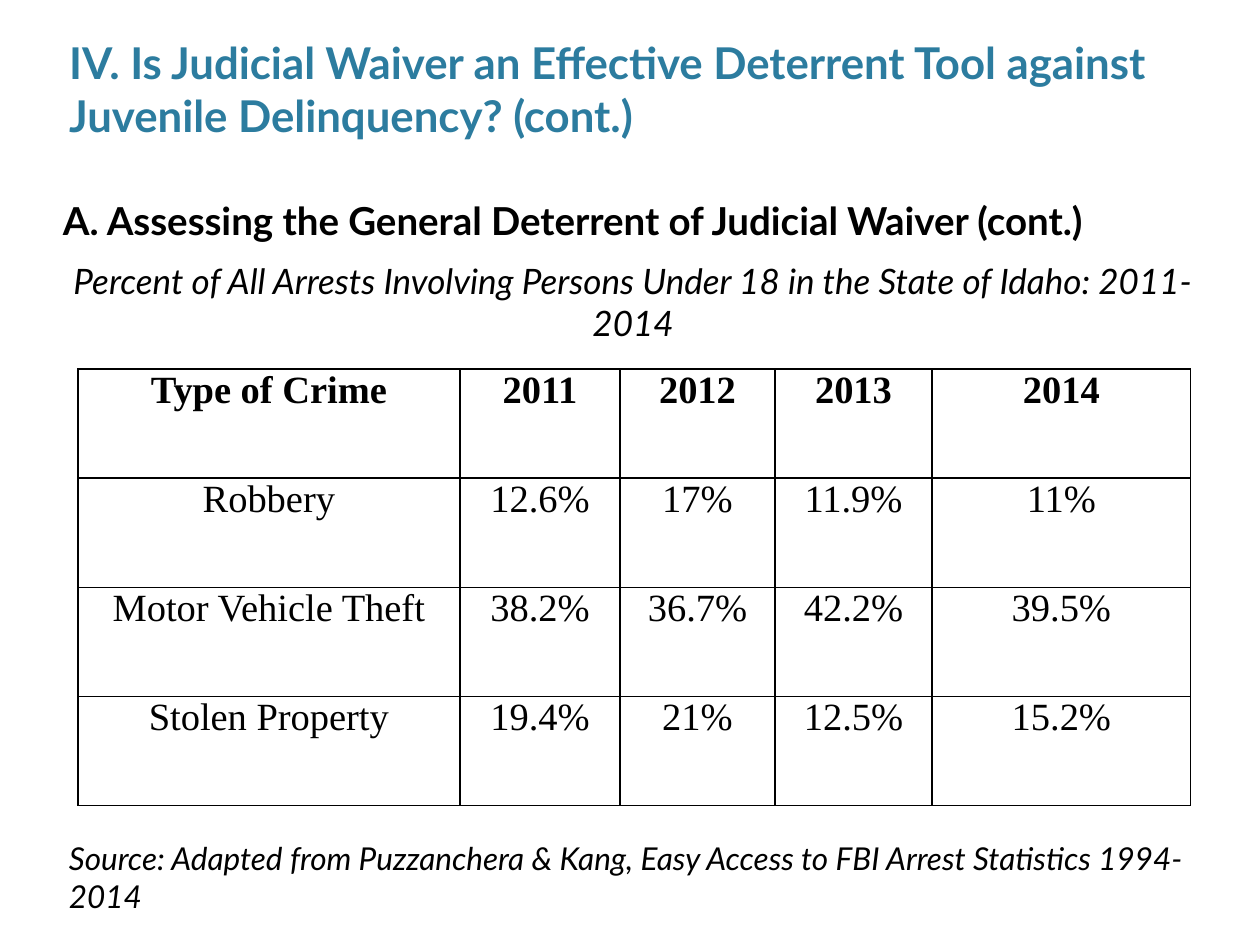
from pptx import Presentation
from pptx.dml.color import RGBColor
from pptx.enum.text import MSO_ANCHOR, MSO_AUTO_SIZE, PP_ALIGN
from pptx.oxml import parse_xml
from pptx.oxml.ns import nsdecls
from pptx.util import Cm, Pt

TEAL = RGBColor(0x2C, 0x7C, 0x9F)
BLACK = RGBColor(0x00, 0x00, 0x00)

ARRESTS = [
    ("Type of Crime", "2011", "2012", "2013", "2014"),
    ("Robbery", "12.6%", "17%", "11.9%", "11%"),
    ("Motor Vehicle Theft", "38.2%", "36.7%", "42.2%", "39.5%"),
    ("Stolen Property", "19.4%", "21%", "12.5%", "15.2%"),
]
COLUMN_WIDTHS = (7.7, 3.23, 3.12, 3.17, 5.21)
ROW_HEIGHT = 2.2


class SlideBuilder:
    """Holds the text style and the slide being filled."""

    text_font = "Lato"
    table_font = "Times New Roman"
    table_size = 22

    def __init__(self, slide):
        self.slide = slide

    def set_text(self, text_frame, text, size, font=text_font, color=BLACK,
                 bold=False, italic=False, align=PP_ALIGN.LEFT):
        text_frame.text = text
        text_frame.word_wrap = True
        paragraph = text_frame.paragraphs[0]
        paragraph.alignment = align
        for run in paragraph.runs:
            run.font.name = font
            run.font.size = Pt(size)
            run.font.color.rgb = color
            run.font.bold = bold
            run.font.italic = italic

    def title(self, text, left, top, width, height, size):
        title = self.slide.shapes.title
        title.left, title.top = Cm(left), Cm(top)
        title.width, title.height = Cm(width), Cm(height)
        self.set_text(title.text_frame, text, size, color=TEAL, bold=True)
        title.text_frame.vertical_anchor = MSO_ANCHOR.BOTTOM
        title.text_frame.auto_size = MSO_AUTO_SIZE.NONE

    def text(self, text, left, top, width, height, size, **style):
        box = self.slide.shapes.add_textbox(Cm(left), Cm(top), Cm(width), Cm(height))
        self.set_text(box.text_frame, text, size, **style)
        box.text_frame.auto_size = MSO_AUTO_SIZE.SHAPE_TO_FIT_TEXT

    def table(self, rows, left, top, column_widths, row_height):
        frame = self.slide.shapes.add_table(
            len(rows), len(column_widths), Cm(left), Cm(top),
            Cm(sum(column_widths)), Cm(row_height * len(rows)))
        table = frame.table
        table.first_row = table.horz_banding = False
        for column, width in zip(table.columns, column_widths):
            column.width = Cm(width)
        for row_index, values in enumerate(rows):
            table.rows[row_index].height = Cm(row_height)
            for column_index, value in enumerate(values):
                cell = table.cell(row_index, column_index)
                self.set_text(cell.text_frame, value, self.table_size,
                              font=self.table_font, bold=row_index == 0,
                              align=PP_ALIGN.CENTER)
                cell.margin_left = cell.margin_right = Cm(0.18)
                cell.margin_top = cell.margin_bottom = 0
                self.border(cell)
                cell.fill.background()

    def border(self, cell):
        properties = cell._tc.get_or_add_tcPr()
        for side in ("lnL", "lnR", "lnT", "lnB"):
            properties.append(parse_xml(
                f'<a:{side} {nsdecls("a")} w="{Pt(1)}"><a:solidFill>'
                f'<a:srgbClr val="{BLACK}"/></a:solidFill></a:{side}>'))


def main():
    presentation = Presentation()
    presentation.slide_width, presentation.slide_height = Cm(25.4), Cm(19.05)
    title_only = presentation.slide_layouts[5]
    builder = SlideBuilder(presentation.slides.add_slide(title_only))

    # Title and section heading
    builder.title("IV. Is Judicial Waiver an Effective Deterrent Tool against "
                  "Juvenile Delinquency? (cont.)", 1.14, 0.43, 23.01, 2.54, 25)
    builder.text("A. Assessing the General Deterrent of Judicial Waiver (cont.)",
                 1.02, 3.84, 23.47, 1.19, 22, bold=True)

    # Arrest table with its caption and source
    builder.text("Percent of All Arrests Involving Persons Under 18 "
                 "in the State of Idaho: 2011-2014",
                 0.94, 5.11, 23.65, 1.96, 20, italic=True, align=PP_ALIGN.CENTER)
    builder.table(ARRESTS, 1.57, 7.44, COLUMN_WIDTHS, ROW_HEIGHT)
    builder.text("Source: Adapted from Puzzanchera & Kang, "
                 "Easy Access to FBI Arrest Statistics 1994-2014",
                 1.14, 16.79, 23.01, 1.8, 18, italic=True)

    presentation.save("out.pptx")


if __name__ == "__main__":
    main()
